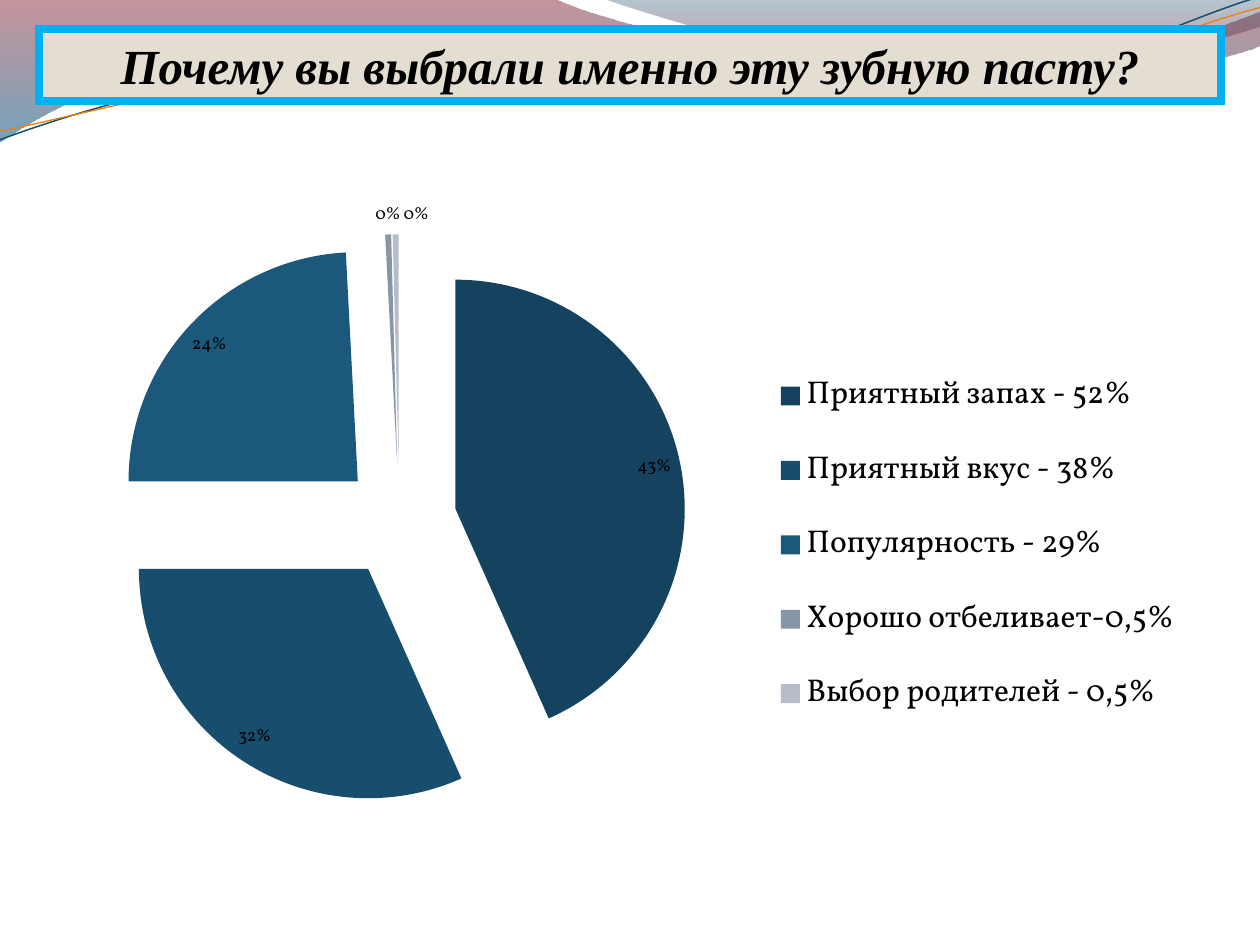
import dataclasses

import lxml.etree
import pptx
import pptx.chart.data
import pptx.dml.color
import pptx.enum.chart
import pptx.enum.shapes
import pptx.enum.text
import pptx.oxml
import pptx.oxml.ns
import pptx.util

COLUMNS, ROWS = 10, 7.5
CELL = pptx.util.Inches(1)


@dataclasses.dataclass(frozen=True)
class Theme:
    title_font: str = "Times New Roman"
    chart_font: str = "Vollkorn"
    title_size: float = 28
    legend_size: float = 18
    label_size: float = 10
    title_border: float = 4.5
    text: str = "000000"
    title_fill: str = "E3DED1"
    title_line: str = "00B0F0"
    slices: tuple = ("15425F", "184E6D", "1B587C", "8696A8", "B7BDC8")
    large_wave: tuple = ((0, "7E1621", 45), (1, "005689", 55))
    small_wave: tuple = ((0, "094467", 30), (0.8, "A10F1F", 45))
    blue_strand: tuple = ("184E6D", 0.85)
    orange_strand: tuple = ("F07F09", 0.75)


THEME = Theme()

LARGE_WAVE = [
    (0, 0), (4.4, -0.01),
    (4.76, 0.17, 6.64, 0.63, 7.58, 0.63),
    (8.53, 0.63, 9.58, 0.26, 10, 0.09),
    (10.01, 0.36),
    (9.83, 0.44, 8.7, 0.76, 7.46, 0.75),
    (6.22, 0.75, 3.82, 0.28, 2.57, 0.34),
    (1.29, 0.36, 0.46, 0.83, -0.01, 1.13),
]
SMALL_WAVE = [
    (4.79, -0.01),
    (5.09, 0.11, 6.82, 0.62, 7.69, 0.65),
    (8.56, 0.69, 9.61, 0.32, 10, 0.21),
    (10, 0),
]
BLUE_STRAND = [
    (0, 1.11),
    (0.48, 0.93, 1.58, 0.57, 2.77, 0.52),
    (3.95, 0.47, 5.93, 0.89, 7.13, 0.8),
    (8.33, 0.71, 9.38, 0.15, 9.98, -0.02),
]
ORANGE_STRAND = [
    (0, 1.04),
    (0.47, 0.96, 1.64, 0.61, 2.83, 0.56),
    (4.03, 0.51, 5.97, 0.84, 7.17, 0.75),
    (8.36, 0.67, 9.41, 0.21, 10, 0.06),
]
ANSWERS = {
    "Приятный запах - 52%": 52,
    "Приятный вкус - 38%": 38,
    "Популярность - 29%": 29,
    "Хорошо отбеливает-0,5%": 0.5,
    "Выбор родителей - 0,5%": 0.5,
}


def color(value):
    return pptx.dml.color.RGBColor.from_string(value)


def grid_box(box):
    return [round(value * CELL) for value in box]


def add_outline(shapes, box, segments, close):
    segments = [grid_box(segment) for segment in segments]
    anchors = [segment[-2:] for segment in segments]
    builder = shapes.build_freeform(*anchors[0], scale=1)
    builder.add_line_segments(anchors[1:], close=close)
    shape = builder.convert_to_shape(*grid_box(box[:2]))
    shape.shadow.inherit = False
    origin = [min(values) for values in zip(*anchors)]
    lines = list(shape._element.iter(pptx.oxml.ns.qn("a:lnTo")))
    for line, segment in zip(lines, segments[1:]):
        if len(segment) == 6:
            bend_line(line, segment, origin)
    return shape


def bend_line(line, segment, origin):
    line.tag = pptx.oxml.ns.qn("a:cubicBezTo")
    for index in (0, 2):
        point = lxml.etree.Element(pptx.oxml.ns.qn("a:pt"))
        point.set("x", str(segment[index] - origin[0]))
        point.set("y", str(segment[index + 1] - origin[1]))
        line.insert(index // 2, point)


def add_wave(shapes, box, segments, stops):
    shape = add_outline(shapes, box, segments, True)
    shape.line.fill.background()
    shape.fill.gradient()
    shape.fill.gradient_angle = 270
    for stop, (position, value, opacity) in zip(shape.fill.gradient_stops, stops):
        stop.position = position
        stop.color.rgb = color(value)
    colors = shape.fill._xPr.iter(pptx.oxml.ns.qn("a:srgbClr"))
    for element, (position, value, opacity) in zip(colors, stops):
        alpha = lxml.etree.SubElement(element, pptx.oxml.ns.qn("a:alpha"))
        alpha.set("val", str(opacity * 1000))


def add_strand(shapes, box, segments, stroke):
    shape = add_outline(shapes, box, segments, False)
    shape.fill.background()
    shape.line.color.rgb = color(stroke[0])
    shape.line.width = pptx.util.Pt(stroke[1])


def add_waves(slide, box):
    add_wave(slide.shapes, box, LARGE_WAVE, THEME.large_wave)
    add_wave(slide.shapes, box, SMALL_WAVE, THEME.small_wave)
    strands = slide.shapes.add_group_shape().shapes
    add_strand(strands, box, BLUE_STRAND, THEME.blue_strand)
    add_strand(strands, box, ORANGE_STRAND, THEME.orange_strand)


def add_title(slide, box, text):
    shape = slide.shapes.add_shape(pptx.enum.shapes.MSO_SHAPE.RECTANGLE, *grid_box(box))
    shape.shadow.inherit = False
    shape.fill.solid()
    shape.fill.fore_color.rgb = color(THEME.title_fill)
    shape.line.color.rgb = color(THEME.title_line)
    shape.line.width = pptx.util.Pt(THEME.title_border)
    outline = shape._element.spPr.find(pptx.oxml.ns.qn("a:ln"))
    miter = lxml.etree.SubElement(outline, pptx.oxml.ns.qn("a:miter"))
    miter.set("lim", "800000")
    frame = shape.text_frame
    frame.text = text
    frame.word_wrap = True
    frame.auto_size = pptx.enum.text.MSO_AUTO_SIZE.SHAPE_TO_FIT_TEXT
    paragraph = frame.paragraphs[0]
    paragraph.alignment = pptx.enum.text.PP_ALIGN.CENTER
    font = paragraph.runs[0].font
    font.name, font.size = THEME.title_font, pptx.util.Pt(THEME.title_size)
    font.bold = font.italic = True
    font.color.rgb = color(THEME.text)


def style_font(font, size):
    font.name, font.size = THEME.chart_font, pptx.util.Pt(size)
    font.color.rgb = color(THEME.text)


def set_layout(element, box, part, target=""):
    for old in element.findall(pptx.oxml.ns.qn("c:layout")):
        element.remove(old)
    shares = [length / total for length, total in zip(part, box[2:] * 2)]
    sizes = "".join(f'<c:{key} val="{share:.4f}"/>' for key, share in zip("xywh", shares))
    layout = pptx.oxml.parse_xml(
        f'<c:layout {pptx.oxml.ns.nsdecls("c")}><c:manualLayout>{target}'
        f'<c:xMode val="edge"/><c:yMode val="edge"/>{sizes}</c:manualLayout></c:layout>'
    )
    position = element.find(pptx.oxml.ns.qn("c:legendPos"))
    element.insert(0 if position is None else element.index(position) + 1, layout)


def add_answer_pie(slide, box, answers):
    data = pptx.chart.data.CategoryChartData()
    data.categories = list(answers)
    data.add_series("Series 1", list(answers.values()))
    chart = slide.shapes.add_chart(
        pptx.enum.chart.XL_CHART_TYPE.PIE_EXPLODED, *grid_box(box), data
    ).chart
    style_font(chart.font, THEME.label_size)
    chart.has_title = False
    chart.has_legend = True
    chart.legend.position = pptx.enum.chart.XL_LEGEND_POSITION.RIGHT
    chart.legend.include_in_layout = False
    style_font(chart.legend.font, THEME.legend_size)

    plot = chart.plots[0]
    plot.vary_by_categories = True
    series = plot.series[0]
    for explosion in series._element.iter(pptx.oxml.ns.qn("c:explosion")):
        explosion.set("val", "25")
    for index, value in enumerate(THEME.slices):
        fill = series.points[index].format.fill
        fill.solid()
        fill.fore_color.rgb = color(value)
    plot.has_data_labels = True
    labels = plot.data_labels
    labels.show_percentage, labels.show_value = True, False
    labels.number_format, labels.number_format_is_linked = "0%", False
    labels.position = pptx.enum.chart.XL_LABEL_POSITION.BEST_FIT
    style_font(labels.font, THEME.label_size)

    area = chart._chartSpace.find(".//" + pptx.oxml.ns.qn("c:plotArea"))
    set_layout(area, box, (0.08, 0.53, 5.72, 4.55), '<c:layoutTarget val="inner"/>')
    set_layout(chart.legend._element, box, (5.83, 1.4, 3.4, 3.19))


def main():
    presentation = pptx.Presentation()
    presentation.slide_width, presentation.slide_height = grid_box((COLUMNS, ROWS))
    slide = presentation.slides.add_slide(presentation.slide_layouts[6])
    add_waves(slide, (0, 0, COLUMNS, 1.13))
    add_title(slide, (0.31, 0.23, 9.38, 0.57), "Почему вы выбрали именно эту зубную пасту?")
    add_answer_pie(slide, (0.23, 1.33, 9.45, 5.55), ANSWERS)
    presentation.save("out.pptx")


if __name__ == "__main__":
    main()
